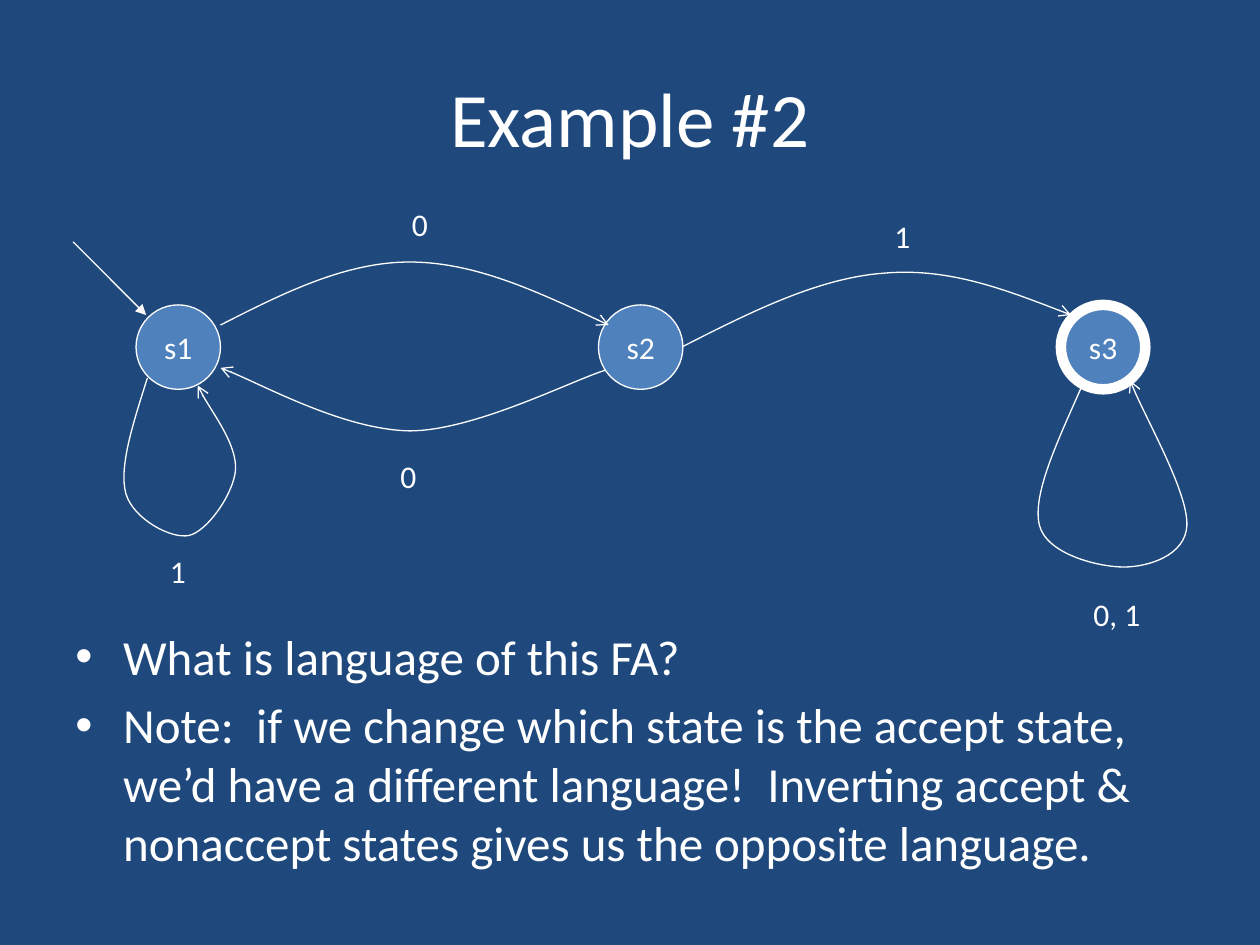
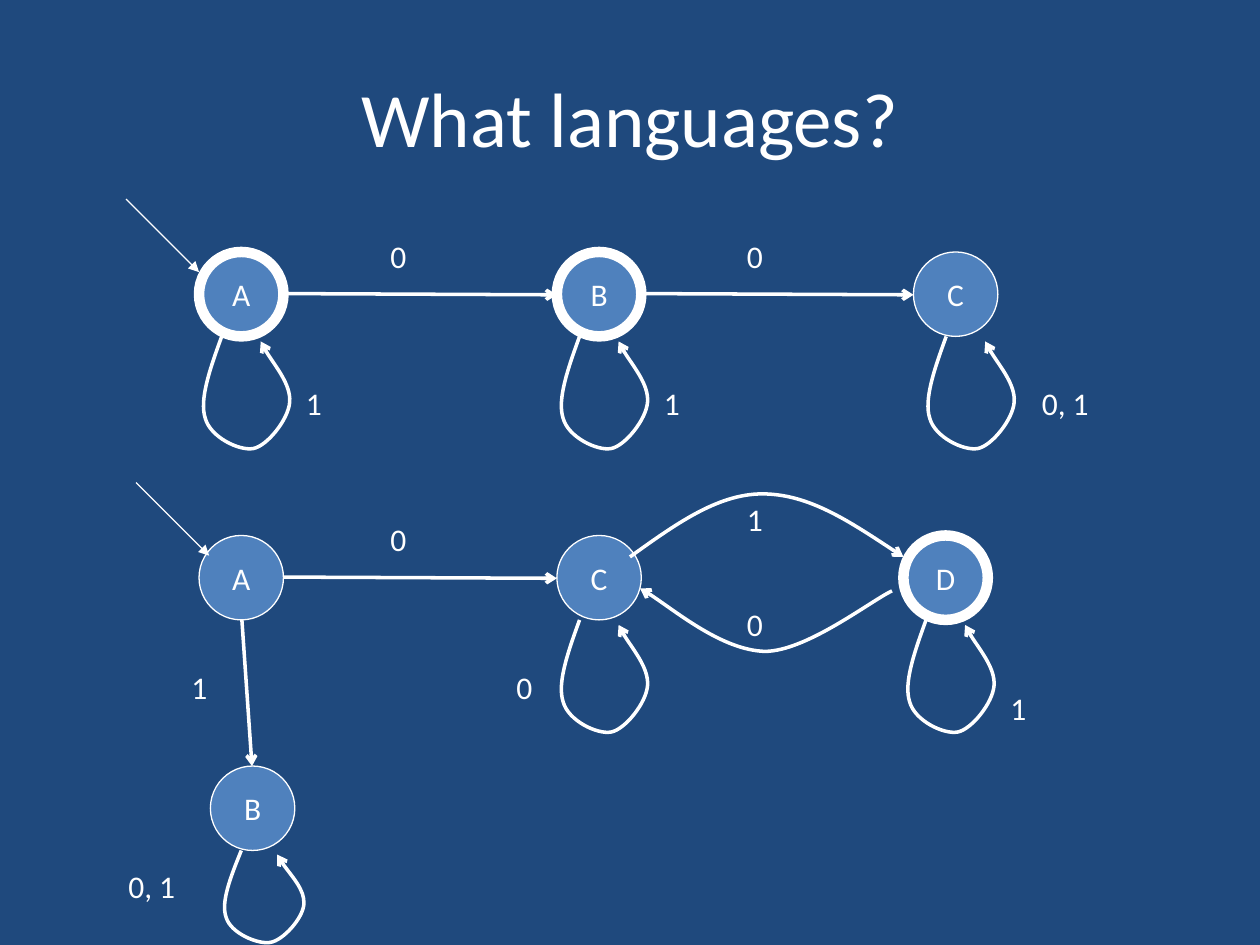
from lxml.etree import SubElement
from pptx import Presentation
from pptx.dml.color import RGBColor
from pptx.enum.shapes import MSO_CONNECTOR, MSO_SHAPE
from pptx.enum.text import MSO_ANCHOR, PP_ALIGN
from pptx.oxml.ns import qn
from pptx.util import Inches, Pt

COLORS = {"back": "1F497D", "node": "4F81BD", "ink": "FFFFFF"}
FONT = "Calibri"
TITLE_SIZE, BODY_SIZE, LABEL_SIZE = 44, 28, 18
THIN, BOLD, RING = 0.75, 2, 6
NODE = 0.67

# Self-loop outline: a start point, then three points for each curve
LOOP = [(0.18, 0), (0.09, 0.25), (0, 0.5), (0.05, 0.65),
        (0.09, 0.8), (0.32, 0.91), (0.43, 0.89),
        (0.54, 0.87), (0.71, 0.66), (0.72, 0.52),
        (0.73, 0.38), (0.53, 0.14), (0.49, 0.04)]


def color(key):
    return RGBColor.from_string(COLORS[key])


def add_run(para, text, size):
    run = para.add_run()
    run.text = text
    run.font.name = FONT
    run.font.size = Pt(size)
    run.font.color.rgb = color("ink")


def add_box(slide, left, top, width, height):
    box = slide.shapes.add_textbox(*map(Inches, (left, top, width, height)))
    box.text_frame.word_wrap = True
    return box.text_frame


def add_slide(deck, title):
    slide = deck.slides.add_slide(deck.slide_layouts[5])
    head = slide.shapes.title
    head.left, head.top, head.width, head.height = map(Inches, (0.5, 0.3, 9, 1.25))
    head.text_frame.vertical_anchor = MSO_ANCHOR.MIDDLE
    para = head.text_frame.paragraphs[0]
    para.alignment = PP_ALIGN.CENTER
    add_run(para, title, TITLE_SIZE)
    return slide


def add_state(slide, name, left, top, final=False):
    """Draw a state; a final (accept) state gets a thick ring."""
    node = slide.shapes.add_shape(
        MSO_SHAPE.OVAL, *map(Inches, (left, top, NODE, NODE)))
    node.shadow.inherit = False
    node.fill.solid()
    node.fill.fore_color.rgb = color("node")
    node.line.color.rgb = color("ink")
    node.line.width = Pt(RING if final else THIN)
    frame = node.text_frame
    frame.word_wrap = False
    frame.vertical_anchor = MSO_ANCHOR.MIDDLE
    para = frame.paragraphs[0]
    para.alignment = PP_ALIGN.CENTER
    add_run(para, name, LABEL_SIZE)


def add_label(slide, text, left, top, width=0.42):
    frame = add_box(slide, left, top, width, 0.4)
    add_run(frame.paragraphs[0], text, LABEL_SIZE)


def style_edge(edge, width, tip):
    """Give a line or curve its colour, its arrowhead and no shadow."""
    edge.line.color.rgb = color("ink")
    edge.line.width = Pt(width)
    props = edge._element.spPr
    SubElement(props.find(qn("a:ln")), qn("a:tailEnd"), type=tip)
    SubElement(props, qn("a:effectLst"))


def add_arrow(slide, start, end, width=BOLD, tip="arrow"):
    edge = slide.shapes.add_connector(
        MSO_CONNECTOR.STRAIGHT, *map(Inches, (*start, *end)))
    style_edge(edge, width, tip)


def add_entry(slide, left, top):
    """Draw the arrow that marks the start state."""
    add_arrow(slide, (left, top), (left + 0.58, top + 0.58), THIN, "triangle")


def add_curve(slide, points, width):
    """Draw cubic curves through a start point and triples of points."""
    spots = [(Inches(x), Inches(y)) for x, y in points]
    pen = slide.shapes.build_freeform(*spots[0])
    pen.add_line_segments(spots[1:], close=False)
    edge = pen.convert_to_shape()
    edge.fill.background()
    path = edge._element.spPr.find(".//" + qn("a:path"))
    lines = path.findall(qn("a:lnTo"))
    for first in range(0, len(lines), 3):
        bend = SubElement(path, qn("a:cubicBezTo"))
        for line in lines[first:first + 3]:
            bend.append(line[0])
            path.remove(line)
    style_edge(edge, width, "arrow")


def add_loop(slide, left, top, wide=1, high=1):
    points = [(left + x * wide, top + y * high) for x, y in LOOP]
    add_curve(slide, points, BOLD)


def add_bullets(slide, items):
    frame = add_box(slide, 0.5, 4.92, 9, 2.33)
    for index, item in enumerate(items):
        para = frame.add_paragraph() if index else frame.paragraphs[0]
        para.space_after = Pt(BODY_SIZE * 0.2)
        props = para._p.get_or_add_pPr()
        props.set("marL", str(Inches(0.38)))
        props.set("indent", str(-Inches(0.38)))
        SubElement(props, qn("a:buFont"), typeface="Arial")
        SubElement(props, qn("a:buChar"), char="•")
        add_run(para, item, BODY_SIZE)


def draw_example(deck):
    slide = add_slide(deck, "Example #2")
    add_bullets(slide, [
        "What is language of this FA?",
        "Note:  if we change which state is the accept state, we’d have a "
        "different language!  Inverting accept & nonaccept states gives us "
        "the opposite language.",
    ])
    for index, name in enumerate(("s1", "s2", "s3")):
        add_state(slide, name, 1.08 + 3.67 * index, 2.42, name == "s3")
    add_entry(slide, 0.58, 1.92)
    curves = [
        [(1.17, 3), (1.06, 3.35), (0.94, 3.71), (1, 3.92),
         (1.06, 4.12), (1.36, 4.28), (1.5, 4.25),
         (1.64, 4.22), (1.85, 3.93), (1.87, 3.73),
         (1.88, 3.53), (1.63, 3.2), (1.57, 3.06)],
        [(8.58, 3.08), (8.39, 3.51), (8.19, 3.93), (8.25, 4.17),
         (8.31, 4.4), (8.72, 4.5), (8.92, 4.5),
         (9.11, 4.5), (9.41, 4.41), (9.42, 4.17),
         (9.43, 3.92), (9.06, 3.26), (8.97, 3.02)],
        [(1.75, 2.58), (2.24, 2.33), (2.74, 2.08), (3.25, 2.08),
         (3.76, 2.08), (4.3, 2.33), (4.83, 2.58)],
        [(4.8, 2.94), (4.54, 3.02), (3.76, 3.42), (3.25, 3.42),
         (2.74, 3.41), (2, 3.01), (1.75, 2.92)],
        [(5.42, 2.75), (5.95, 2.48), (6.49, 2.21), (7, 2.17),
         (7.51, 2.12), (8.01, 2.31), (8.5, 2.5)],
    ]
    for points in curves:
        add_curve(slide, points, THIN)
    for label in [("0", 3.17, 1.58), ("0", 3.08, 3.58), ("1", 7, 1.67),
                  ("0, 1", 8.58, 4.67, 0.75), ("1", 1.25, 4.33)]:
        add_label(slide, *label)


def draw_quiz(deck):
    slide = add_slide(deck, "What languages?")
    states = [("A", 1.58, 2, True), ("B", 4.42, 2, True), ("C", 7.25, 2),
              ("A", 1.58, 4.25), ("C", 4.42, 4.25), ("D", 7.17, 4.25, True),
              ("B", 1.67, 6.08)]
    for state in states:
        add_state(slide, *state)
    add_entry(slide, 1, 1.58)
    add_entry(slide, 1.08, 3.83)

    for left, y in [(2.25, 2.33), (5.08, 2.33), (2.25, 4.58)]:
        add_arrow(slide, (left, y), (left + 2.17, y + 0.01))
    add_arrow(slide, (1.92, 4.92), (2, 6.08))

    for left, top in [(1.58, 2.67), (4.42, 2.67), (7.33, 2.67),
                      (4.42, 4.92), (7.17, 4.92)]:
        add_loop(slide, left, top)
    add_loop(slide, 1.75, 6.75, 0.92, 0.82)

    add_curve(slide, [(5, 4.42), (5.35, 4.17), (5.69, 3.92), (6.05, 3.92),
                      (6.42, 3.92), (6.79, 4.17), (7.17, 4.42)], BOLD)
    add_curve(slide, [(7.08, 4.69), (6.91, 4.77), (6.4, 5.17), (6.07, 5.17),
                      (5.73, 5.16), (5.25, 4.76), (5.08, 4.67)], BOLD)

    labels = [("0", 3, 1.83), ("0", 5.83, 1.83),
              ("1", 2.33, 3), ("1", 5.17, 3), ("0, 1", 8.17, 3, 0.75),
              ("0", 3, 4.08), ("1", 5.83, 3.92), ("0", 5.83, 4.75),
              ("1", 1.42, 5.25), ("0", 4, 5.25), ("1", 7.92, 5.42),
              ("0, 1", 0.92, 6.83, 0.75)]
    for label in labels:
        add_label(slide, *label)


def main():
    deck = Presentation()
    deck.slide_width, deck.slide_height = Inches(10), Inches(7.5)
    back = deck.slide_master.background.fill
    back.solid()
    back.fore_color.rgb = color("back")
    draw_example(deck)
    draw_quiz(deck)
    deck.save("out.pptx")


if __name__ == "__main__":
    main()
